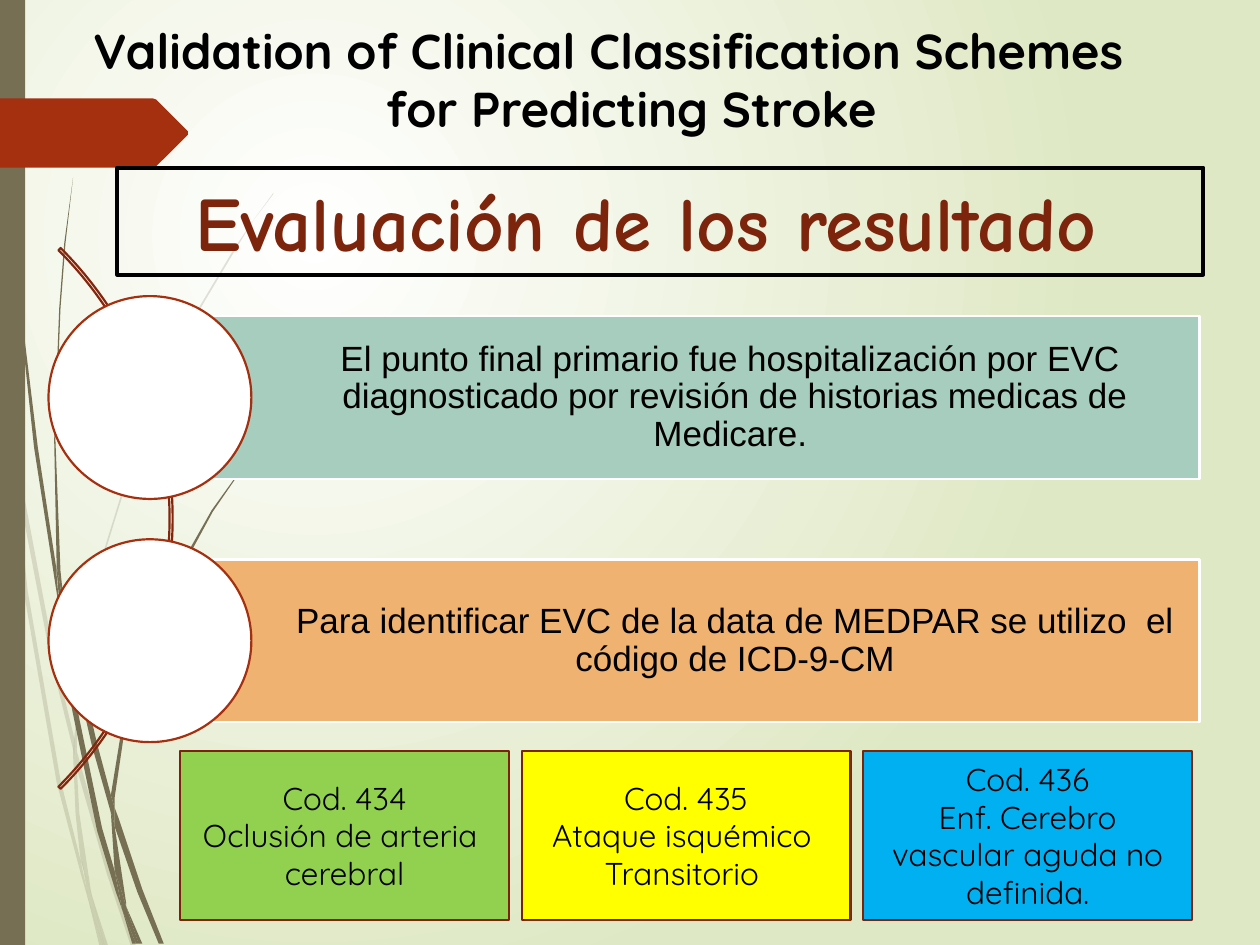
from lxml.etree import SubElement
from pptx import Presentation
from pptx.dml.color import RGBColor
from pptx.enum.shapes import MSO_SHAPE
from pptx.enum.text import MSO_ANCHOR, MSO_AUTO_SIZE, PP_ALIGN
from pptx.oxml.ns import qn
from pptx.util import Inches, Pt

TITLE = ["Validation of Clinical Classification Schemes", " for Predicting Stroke"]
HEAD = "Evaluación de los resultado "
BANDS = [
    ("El punto final primario fue hospitalización por EVC  diagnosticado por "
     "revisión de historias medicas de Medicare. ", "A6CDBD"),
    ("Para identificar EVC de la data de MEDPAR se utilizo  el código de ICD-9-CM", "F0B270"),
]
CARDS = [
    (["Cod. 434", "Oclusión de arteria ", "cerebral"], "92D050"),
    (["Cod. 435", "Ataque isquémico ", "Transitorio "], "FFFF00"),
    (["Cod. 436", "Enf. Cerebro vascular aguda no definida."], "00B0F0"),
]
PALE = [
    (8, 350, 6, 322, 0, 282, 0, 299, 7, 344),
    (40, 522, 59, 599, 59, 586, 43, 520, 10, 345, 12, 376),
    (64, 607, 61, 596, 61, 610, 85, 694, 104, 751, 108, 751, 88, 692),
    (83, 751, 86, 751, 73, 711),
    (64, 683, 48, 619, 22, 469, 12, 376, 8, 350, 19, 470, 45, 621, 64, 693, 70, 714, 69, 707),
    (58, 599, 60, 646, 64, 683, 67, 692, 73, 711, 72, 706, 63, 646, 61, 610, 61, 608),
    (61, 584, 76, 462, 111, 349, 159, 245, 187, 198, 201, 175, 217, 154, 217, 153, 201, 175,
     186, 197, 158, 244, 110, 348, 75, 461, 59, 584, 59, 586, 61, 596),
    (70, 714, 79, 751, 82, 751),
    (61, 608, 61, 610, 61, 596, 59, 586, 58, 599),
    (67, 692, 65, 683, 69, 707, 70, 714, 82, 751, 83, 751, 73, 711),
]
DARK = [
    (5, 110, 14, 233, 27, 355, 46, 477, 47, 481, 45, 457, 45, 453, 30, 355, 15, 232, 6, 109,
     4, 48, 3, 0, 2, 0, 3, 48),
    (73, 592, 88, 645, 88, 633, 88, 631, 77, 590, 50, 472, 53, 505),
    (94, 649, 91, 641, 91, 656, 109, 708, 126, 749, 130, 749, 113, 706),
    (91, 691, 81, 657, 60, 556, 53, 505, 47, 477, 56, 557, 77, 659, 92, 708, 97, 722, 96, 717),
    (50, 472, 48, 453, 44, 349, 48, 245, 52, 193, 58, 141, 51, 193, 47, 245, 43, 349, 45, 449,
     49, 472),
    (110, 749, 113, 749, 100, 719),
    (47, 477, 53, 505, 50, 472, 49, 472, 45, 449, 45, 453),
    (91, 633, 103, 552, 131, 476, 169, 406, 191, 374, 203, 359, 216, 344, 215, 344, 203, 358,
     191, 373, 168, 405, 129, 474, 101, 551, 88, 631, 91, 641),
    (97, 722, 105, 749, 108, 749),
    (88, 645, 91, 691, 96, 706, 100, 719, 100, 716, 91, 656, 90, 651),
    (88, 645, 90, 651, 91, 656, 91, 641, 88, 631, 88, 633),
    (96, 706, 91, 691, 96, 717, 97, 722, 108, 749, 110, 749, 100, 719),
]
ARROW = (149, 107, 124, 132, 121, 133, 0, 133, 0, 78, 121, 78, 124, 79, 149, 104)
EARTH, RUST, BROWN = "766F54", "A53010", "7A240C"


def rgb(code):
    """Turn a hex string into a colour."""
    return RGBColor.from_string(code)


def paint(shape, fill=None, line=None, width=1.25):
    """Set fill and line, and drop the shadow."""
    shape.shadow.inherit = False
    if fill:
        shape.fill.solid()
        shape.fill.fore_color.rgb = rgb(fill)
    else:
        shape.fill.background()
    if line:
        shape.line.color.rgb = rgb(line)
        shape.line.width = Pt(width)
    else:
        shape.line.fill.background()


def add(kind, box, fill=None, line=None, width=1.25):
    """Add a painted preset shape at a box in inches."""
    shape = slide.shapes.add_shape(kind, *map(Inches, box))
    paint(shape, fill, line, width)
    return shape


def trace(flat, fill, alpha=None):
    """Draw a closed outline given in hundredths of an inch."""
    dots = list(zip(flat[::2], flat[1::2]))
    pen = slide.shapes.build_freeform(*dots[0], scale=Inches(0.01))
    pen.add_line_segments(dots[1:])
    shape = pen.convert_to_shape()
    paint(shape, fill)
    if alpha:
        tone = shape.fill._xPr.find(".//" + qn("a:srgbClr"))
        SubElement(tone, qn("a:alpha"), val=str(alpha * 1000))


def write(shape, lines, size, font, color="000000", bold=False):
    """Write centred paragraphs in one style."""
    frame = shape.text_frame
    frame.word_wrap = True
    frame.vertical_anchor = MSO_ANCHOR.MIDDLE
    frame.text = "\n".join(lines)
    for para in frame.paragraphs:
        para.alignment = PP_ALIGN.CENTER
        for run in para.runs:
            run.font.size, run.font.name, run.font.bold = Pt(size), font, bold
            run.font.color.rgb = rgb(color)
    return frame


def backdrop():
    """Give the slide its radial gradient."""
    fill = slide.background.fill
    fill.gradient()
    for stop, code in zip(fill.gradient_stops, ("FFFFFF", "DFE8C4")):
        stop.color.rgb = rgb(code)
    grad = slide._element.find(".//" + qn("a:gradFill"))
    lin = grad.find(qn("a:lin"))
    ring = SubElement(grad, qn("a:path"), path="circle")
    SubElement(ring, qn("a:fillToRect"), l="50000", t="50000", r="100000", b="100000")
    grad.replace(lin, ring)


def heading():
    """Place the title and the framed heading."""
    title = slide.shapes.title
    title.left, title.top, title.width, title.height = map(Inches, (0.64, 0.11, 8.63, 1.04))
    frame = write(title, TITLE, 28, "Quicksand", bold=True)
    frame.auto_size = MSO_AUTO_SIZE.NONE
    frame.word_wrap = False
    frame.vertical_anchor = MSO_ANCHOR.TOP
    frame.paragraphs[0].alignment = PP_ALIGN.LEFT
    box = add(MSO_SHAPE.RECTANGLE, (0.93, 1.33, 8.62, 0.85), line="000000", width=2.25)
    write(box, [HEAD], 44, "Comic Neue", "7C240C", True)


def bands():
    """Draw the arc and the bands with their circles."""
    arc = add(MSO_SHAPE.BLOCK_ARC, (-4.7, 1.08, 6.07, 6.07), line="84260D")
    for i, val in enumerate((189, 27, 0.004)):
        arc.adjustments[i] = val
    left, high, disc = 1.19, 1.29, 1.61
    for i, (text, fill) in enumerate(BANDS):
        top = 2.51 + 1.93 * i
        band = add(MSO_SHAPE.RECTANGLE, (left, top, 8.33, high), fill, "FFFFFF")
        frame = write(band, [text], 20, "Arial")
        frame.margin_left = Inches(1.02)
        frame.margin_right = frame.margin_top = frame.margin_bottom = Inches(0.06)
        frame.paragraphs[0].line_spacing = 0.9
        spot = (left - disc / 2, top + (high - disc) / 2, disc, disc)
        add(MSO_SHAPE.OVAL, spot, "FFFFFF", RUST)


def cards():
    """Draw the row of code cards."""
    wide, gap = 2.61, 0.1
    for i, (lines, fill) in enumerate(CARDS):
        box = (1.43 + i * (wide + gap), 5.96, wide, 1.34)
        write(add(MSO_SHAPE.RECTANGLE, box, fill, BROWN), lines, 18, "Quicksand")


deck = Presentation()
deck.slide_width, deck.slide_height = Inches(10), Inches(7.5)
slide = deck.slides.add_slide(deck.slide_layouts[5])
backdrop()
for wisp in PALE:
    trace(wisp, EARTH, 20)
for wisp in DARK:
    trace(wisp, EARTH)
add(MSO_SHAPE.RECTANGLE, (0, 0, 0.2, 7.5), EARTH)
trace(ARROW, RUST)
heading()
bands()
cards()
deck.save("out.pptx")
